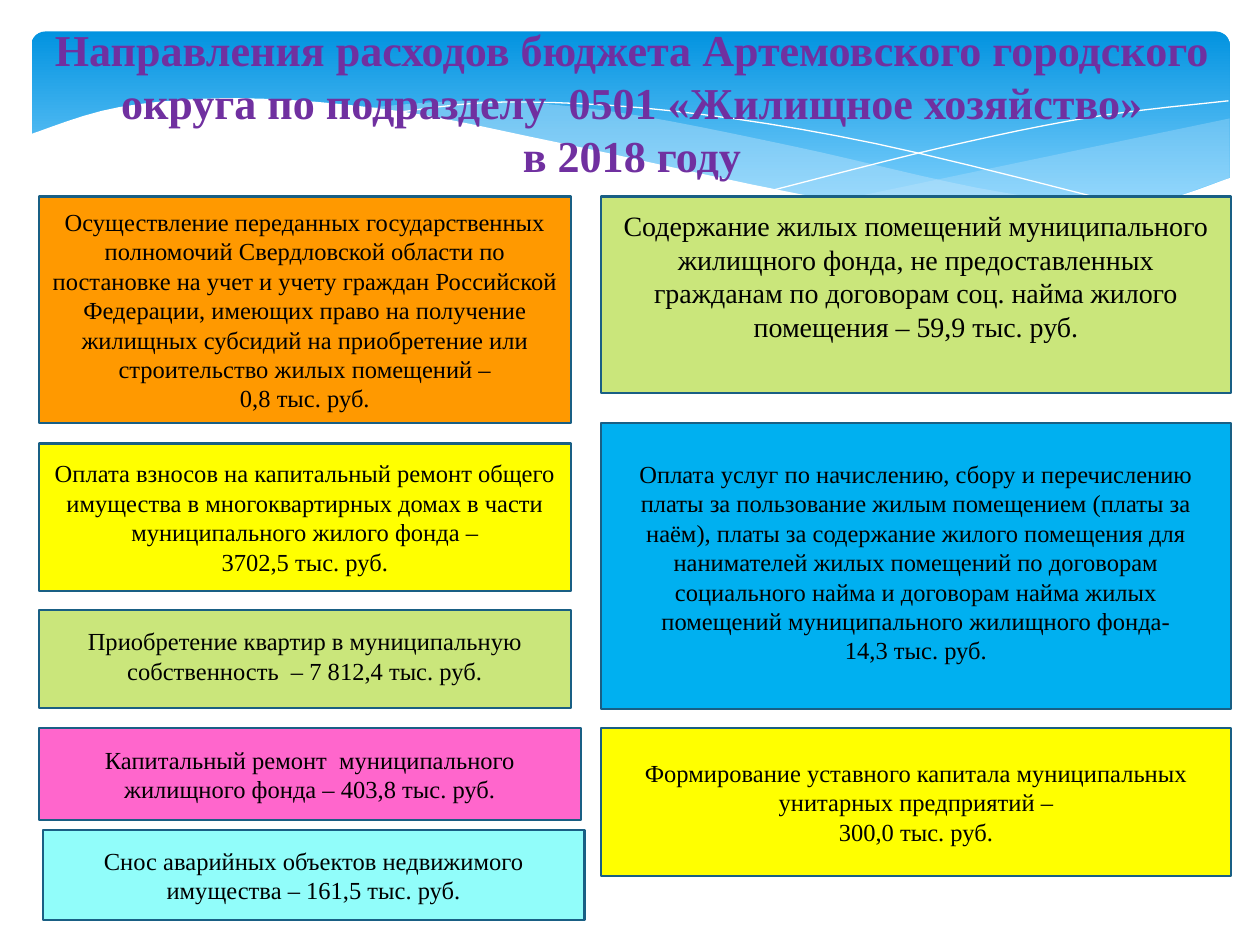
import dataclasses

import lxml.etree
import pptx
import pptx.dml.color
import pptx.enum.shapes
import pptx.enum.text
import pptx.oxml.ns
import pptx.util

Inches = pptx.util.Inches
Point = tuple[float, float]

FONT = "Times New Roman"
BORDER = "195F84"
WAVE = "C6E7FC"
WHITE = "FFFFFF"
LEFT_X, LEFT_WIDTH = 0.31, 4.22
RIGHT_X, RIGHT_WIDTH = 4.77, 5
LOWER_WIDTH = 4.3
CURVE_STEPS = 6


@dataclasses.dataclass(frozen=True)
class Expense:
    left: float
    top: float
    width: float
    height: float
    fill: str
    text: str
    size: float = 14
    bottom_inset: float = 0.05


@dataclasses.dataclass(frozen=True)
class Wave:
    edges: list[list[Point]]
    fill: str | None = None
    opacity: int = 100


WAVES = [
    Wave([[(9.76, 0.94), (8.61, 1.18), (6.61, 1.6)],
          [(6.61, 1.6), (7.9, 1.72), (8.97, 1.65), (9.76, 1.41)]], WAVE, 29),
    Wave([[(8.93, 1.67), (7.75, 1.49), (6.29, 1.16), (4.89, 0.89), (3.8, 0.8),
           (2.86, 0.86)],
          [(2.86, 0.86), (4.5, 1.16), (6, 1.5), (7.36, 1.69), (8.2, 1.73),
           (8.93, 1.67)]], WAVE, 40),
    Wave([[(3.09, 0.9), (4, 0.81), (5.33, 0.88), (6.95, 1.14), (9.07, 1.66)]]),
    Wave([[(6.13, 1.51), (7.48, 1.17), (8.66, 0.93), (9.75, 0.8)]]),
    Wave([[(9.77, 1.41), (9.1, 1.62), (8.1, 1.71), (6.68, 1.6), (4.47, 1.14),
           (3.15, 0.88), (1.93, 0.78), (0.95, 0.85), (0.23, 1.07)],
          [(0.23, 2.24), (9.77, 2.24)]], WHITE),
]

EXPENSES = [
    Expense(LEFT_X, 1.56, LEFT_WIDTH, 1.8, "FF9900",
            "Осуществление переданных государственных полномочий Свердловской области "
            "по постановке на учет и учету граждан Российской Федерации, имеющих право "
            "на получение жилищных субсидий на приобретение или строительство жилых "
            "помещений –\n0,8 тыс. руб."),
    Expense(LEFT_X, 3.52, LEFT_WIDTH, 1.17, "FFFF00",
            "Оплата взносов на капитальный ремонт общего имущества в многоквартирных "
            "домах в части муниципального жилого фонда –\n3702,5 тыс. руб."),
    Expense(LEFT_X, 4.84, LEFT_WIDTH, 0.78, "CAE67B",
            "Приобретение квартир в муниципальную собственность  – 7 812,4 тыс. руб.",
            bottom_inset=0.1),
    Expense(RIGHT_X, 1.56, RIGHT_WIDTH, 1.56, "CAE67B",
            "Содержание жилых помещений муниципального жилищного фонда, не "
            "предоставленных гражданам по договорам соц. найма жилого помещения – "
            "59,9 тыс. руб.", 16, 0.35),
    Expense(RIGHT_X, 3.36, RIGHT_WIDTH, 2.27, "00B0F0",
            "Оплата услуг по начислению, сбору и перечислению платы за пользование "
            "жилым помещением (платы за наём), платы за содержание жилого помещения "
            "для нанимателей жилых помещений по договорам социального найма и "
            "договорам найма жилых помещений муниципального жилищного фонда-\n"
            "14,3 тыс. руб.", bottom_inset=0.12),
    Expense(RIGHT_X, 5.78, RIGHT_WIDTH, 1.17, "FFFF00",
            "Формирование уставного капитала муниципальных унитарных предприятий –\n"
            "300,0 тыс. руб."),
    Expense(LEFT_X, 5.78, LOWER_WIDTH, 0.73, "FF66CC",
            "Капитальный ремонт  муниципального жилищного фонда – 403,8 тыс. руб."),
    Expense(0.34, 6.59, LOWER_WIDTH, 0.71, "91FDFA",
            "Снос аварийных объектов недвижимого имущества – 161,5 тыс. руб."),
]


def color(value: str) -> pptx.dml.color.RGBColor:
    return pptx.dml.color.RGBColor.from_string(value)


def write(frame, text: str, size: float, ink: str, bold: bool = False) -> None:
    frame.text = text
    frame.word_wrap = True
    frame.auto_size = pptx.enum.text.MSO_AUTO_SIZE.NONE
    frame.vertical_anchor = pptx.enum.text.MSO_ANCHOR.MIDDLE
    for paragraph in frame.paragraphs:
        paragraph.alignment = pptx.enum.text.PP_ALIGN.CENTER
        for run in paragraph.runs:
            run.font.name = FONT
            run.font.size = pptx.util.Pt(size)
            run.font.bold = bold
            run.font.color.rgb = color(ink)


def draw_banner(slide) -> None:
    banner = slide.shapes.add_shape(
        pptx.enum.shapes.MSO_SHAPE.ROUNDED_RECTANGLE,
        Inches(0.25), Inches(0.25), Inches(9.51), Inches(1.56))
    banner.adjustments[0] = 0.07
    banner.shadow.inherit = False
    banner.line.fill.background()
    banner.fill.gradient()
    banner.fill.gradient_angle = 270
    stops = [(0, "0293E0"), (0.9, "83D3FE")]
    for stop, (position, value) in zip(banner.fill.gradient_stops, stops):
        stop.position = position
        stop.color.rgb = color(value)


def spline(a: float, b: float, c: float, d: float, t: float) -> float:
    return b + t / 2 * (c - a + t * (2 * a - 5 * b + 4 * c - d
                                     + t * (3 * (b - c) + d - a)))


def smooth_edge(knots: list[Point]) -> list[Point]:
    padded = [knots[0], *knots, knots[-1]]
    curve = [knots[0]]
    for span in zip(padded, padded[1:], padded[2:], padded[3:]):
        xs, ys = zip(*span)
        for step in range(1, CURVE_STEPS + 1):
            t = step / CURVE_STEPS
            curve.append((spline(*xs, t), spline(*ys, t)))
    return curve


def draw_wave(slide, wave: Wave) -> None:
    start, *rest = [(Inches(x), Inches(y))
                    for edge in wave.edges for x, y in smooth_edge(edge)]
    builder = slide.shapes.build_freeform(*start)
    builder.add_line_segments(rest, close=wave.fill is not None)
    curve = builder.convert_to_shape()
    curve.shadow.inherit = False
    if wave.fill is None:
        curve.fill.background()
        curve.line.color.rgb = color(WHITE)
        curve.line.width = pptx.util.Pt(0)
        return
    curve.line.fill.background()
    curve.fill.solid()
    curve.fill.fore_color.rgb = color(wave.fill)
    if wave.opacity < 100:
        tint = curve.element.spPr.find(".//" + pptx.oxml.ns.qn("a:srgbClr"))
        alpha = lxml.etree.SubElement(tint, pptx.oxml.ns.qn("a:alpha"))
        alpha.set("val", str(wave.opacity * 1000))


def place_title(slide) -> None:
    title = slide.shapes.title
    title.left, title.top = Inches(0.27), Inches(0.21)
    title.width, title.height = Inches(9.49), Inches(1.2)
    write(title.text_frame,
          "Направления расходов бюджета Артемовского городского округа "
          "по подразделу  0501 «Жилищное хозяйство»\vв 2018 году",
          25.2, "7030A0", bold=True)
    title.element.getparent().append(title.element)


def draw_expense(slide, expense: Expense) -> None:
    card = slide.shapes.add_shape(
        pptx.enum.shapes.MSO_SHAPE.RECTANGLE, Inches(expense.left),
        Inches(expense.top), Inches(expense.width), Inches(expense.height))
    card.shadow.inherit = False
    card.fill.solid()
    card.fill.fore_color.rgb = color(expense.fill)
    card.line.color.rgb = color(BORDER)
    card.line.width = pptx.util.Pt(1.25)
    write(card.text_frame, expense.text, expense.size, "000000")
    card.text_frame.margin_bottom = Inches(expense.bottom_inset)


def main() -> None:
    deck = pptx.Presentation()
    deck.slide_width, deck.slide_height = Inches(10), Inches(7.5)
    slide = deck.slides.add_slide(deck.slide_layouts[5])
    draw_banner(slide)
    for wave in WAVES:
        draw_wave(slide, wave)
    place_title(slide)
    for expense in EXPENSES:
        draw_expense(slide, expense)
    deck.save("out.pptx")


if __name__ == "__main__":
    main()
